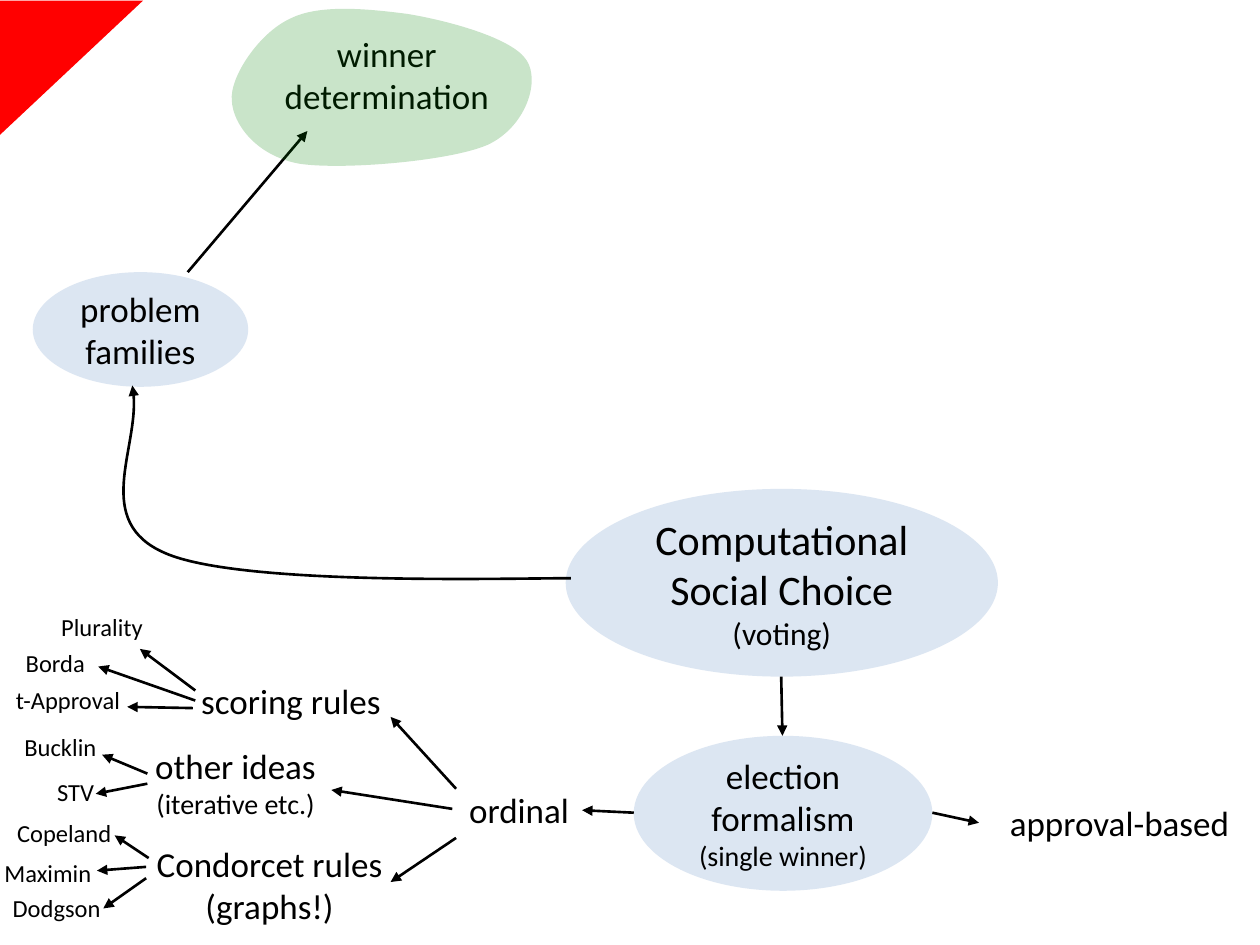
from lxml import etree
from pptx import Presentation
from pptx.dml.color import RGBColor
from pptx.enum import shapes, text
from pptx.oxml import ns
from pptx.util import Inches, Pt


def paint(fill, hex_color):
    fill.solid()
    fill.fore_color.rgb = RGBColor.from_string(hex_color)


def write(shape, lines):
    """Fill a shape with centred (wording, size) paragraphs."""
    frame = shape.text_frame
    frame.word_wrap = True
    for i, (wording, size) in enumerate(lines):
        paragraph = frame.add_paragraph() if i else frame.paragraphs[0]
        paragraph.text = wording
        paragraph.alignment = text.PP_ALIGN.CENTER
        paragraph.font.size = Pt(size)
        paragraph.font.name = "Calibri"
        paint(paragraph.font.fill, "000000")


deck = Presentation()
deck.slide_width, deck.slide_height = Inches(10), Inches(7.5)
slide = deck.slides.add_slide(deck.slide_layouts[6])

# Red corner
corner = slide.shapes.add_shape(shapes.MSO_SHAPE.RIGHT_TRIANGLE, Inches(0.03),
                                Inches(-0.03), Inches(1.07), Inches(1.14))
corner.rotation = 90
corner.shadow.inherit = False
paint(corner.fill, "FF0000")
corner.line.fill.background()

# Main topics
topics = [
    (4.49, 3.88, 3.43, 1.49, [("Computational Social Choice", 24), ("(voting)", 18)]),
    (5.03, 5.84, 2.37, 1.23, [("election formalism", 20), ("(single winner)", 16)]),
    (0.26, 2.16, 1.71, 0.91, [("problem families", 20)]),
]
for left, top, width, height, lines in topics:
    topic = slide.shapes.add_shape(shapes.MSO_SHAPE.OVAL, Inches(left), Inches(top),
                                   Inches(width), Inches(height))
    topic.shadow.inherit = False
    paint(topic.fill, "DCE6F2")
    topic.line.fill.background()
    topic.text_frame.vertical_anchor = text.MSO_ANCHOR.MIDDLE
    write(topic, lines)

# Branch labels, then the voting rules at the left edge
labels = [
    (7.77, 6.31, 2.23, 0.44, "approval-based", 20),
    (3.62, 6.21, 1, 0.44, "ordinal", 20),
    (1.43, 5.34, 1.76, 0.44, "scoring rules", 20),
    (1.06, 6.64, 2.16, 0.77, "Condorcet rules\n(graphs!)", 20),
    (2.14, 0.21, 1.86, 0.77, "winner determination", 20),
    (0.99, 5.86, 1.76, 0.71, "other ideas\n", 20),
]
rules = [
    ("Plurality", -0.07, 4.81), ("Borda", -0.44, 5.09), ("t-Approval", -0.34, 5.39),
    ("Bucklin", -0.4, 5.76), ("STV", -0.28, 6.12),
    ("Copeland", -0.37, 6.44), ("Maximin", -0.5, 6.76), ("Dodgson", -0.43, 7.04),
]
labels += [(left, top, 1.76, 0.34, rule, 14) for rule, left, top in rules]
for left, top, width, height, wording, size in labels:
    label = slide.shapes.add_textbox(Inches(left), Inches(top),
                                     Inches(width), Inches(height))
    label.text_frame.auto_size = text.MSO_AUTO_SIZE.SHAPE_TO_FIT_TEXT
    # A single paragraph, with its line break kept inside
    first = label.text_frame.paragraphs[0]
    write(label, [(wording, size)])
    if wording.startswith("other ideas"):
        remark = first.add_run()
        remark.text = "(iterative etc.)"
        remark.font.size = Pt(16)

# Straight arrows: from x, from y, to x, to y
routes = [
    (6.2, 5.37, 6.21, 5.84), (7.4, 6.45, 7.77, 6.53), (5.03, 6.45, 4.62, 6.43),
    (3.62, 6.65, 3.1, 7), (3.59, 6.42, 2.63, 6.27), (3.62, 6.26, 3.1, 5.69),
    (1.55, 5.48, 1.11, 5.15), (1.55, 5.56, 0.78, 5.29), (1.53, 5.62, 1.01, 5.61),
    (1.17, 6.14, 0.81, 5.99), (1.17, 6.22, 0.76, 6.3),
    (1.18, 6.81, 0.91, 6.63), (1.16, 6.88, 0.77, 6.91), (1.16, 6.97, 0.82, 7.21),
    (1.49, 2.16, 2.44, 1.04),
]
arrows = [slide.shapes.add_connector(shapes.MSO_CONNECTOR.STRAIGHT, *map(Inches, route))
          for route in routes]

# Curved outlines: a start point, then two control points and an end per segment
sweep_curve = [(4.53, 4.59), (4, 4.59), (1.9, 4.65), (1.31, 4.39),
               (0.73, 4.14), (1.14, 3.5), (1.05, 3.06)]
blob_curve = [(2.3, 0.15), (2.06, 0.26), (1.82, 0.61), (1.84, 0.8),
              (1.85, 0.99), (2.04, 1.24), (2.38, 1.3),
              (2.72, 1.35), (3.57, 1.28), (3.87, 1.15),
              (4.17, 1.01), (4.29, 0.65), (4.18, 0.48),
              (4.07, 0.3), (3.54, 0.16), (3.23, 0.11),
              (2.92, 0.07), (2.53, 0.03), (2.3, 0.15)]
outlines = []
for curve, closed in ((sweep_curve, False), (blob_curve, True)):
    points = [(Inches(x), Inches(y)) for x, y in curve]
    builder = slide.shapes.build_freeform(*points[0])
    builder.add_line_segments(points[3::3], close=closed)
    outline = builder.convert_to_shape()
    outline.shadow.inherit = False
    # Turn each straight segment into a Bezier segment
    segments = list(outline._element.iter(ns.qn("a:lnTo")))
    for i, segment in enumerate(segments):
        bezier = etree.Element(ns.qn("a:cubicBezTo"))
        for x, y in points[3 * i + 1:3 * i + 4]:
            etree.SubElement(bezier, ns.qn("a:pt"),
                             x=str(x - outline.left), y=str(y - outline.top))
        segment.getparent().replace(segment, bezier)
    outlines.append(outline)
sweep, blob = outlines

# Arrow from the centre to the problem families
sweep.fill.background()
arrows.append(sweep)

# Translucent highlight over winner determination
paint(blob.fill, "008000")
blob.line.fill.background()
green = blob.fill._xPr.find(".//" + ns.qn("a:srgbClr"))
etree.SubElement(green, ns.qn("a:alpha"), val="21000")

# Line style and heads for all arrows
for arrow in arrows:
    arrow.line.width = Pt(1.5)
    paint(arrow.line.fill, "000000")
    etree.SubElement(arrow.line._get_or_add_ln(), ns.qn("a:tailEnd"), type="triangle")
    if arrow is not sweep:
        etree.SubElement(arrow._element.spPr, ns.qn("a:effectLst"))

deck.save("out.pptx")
